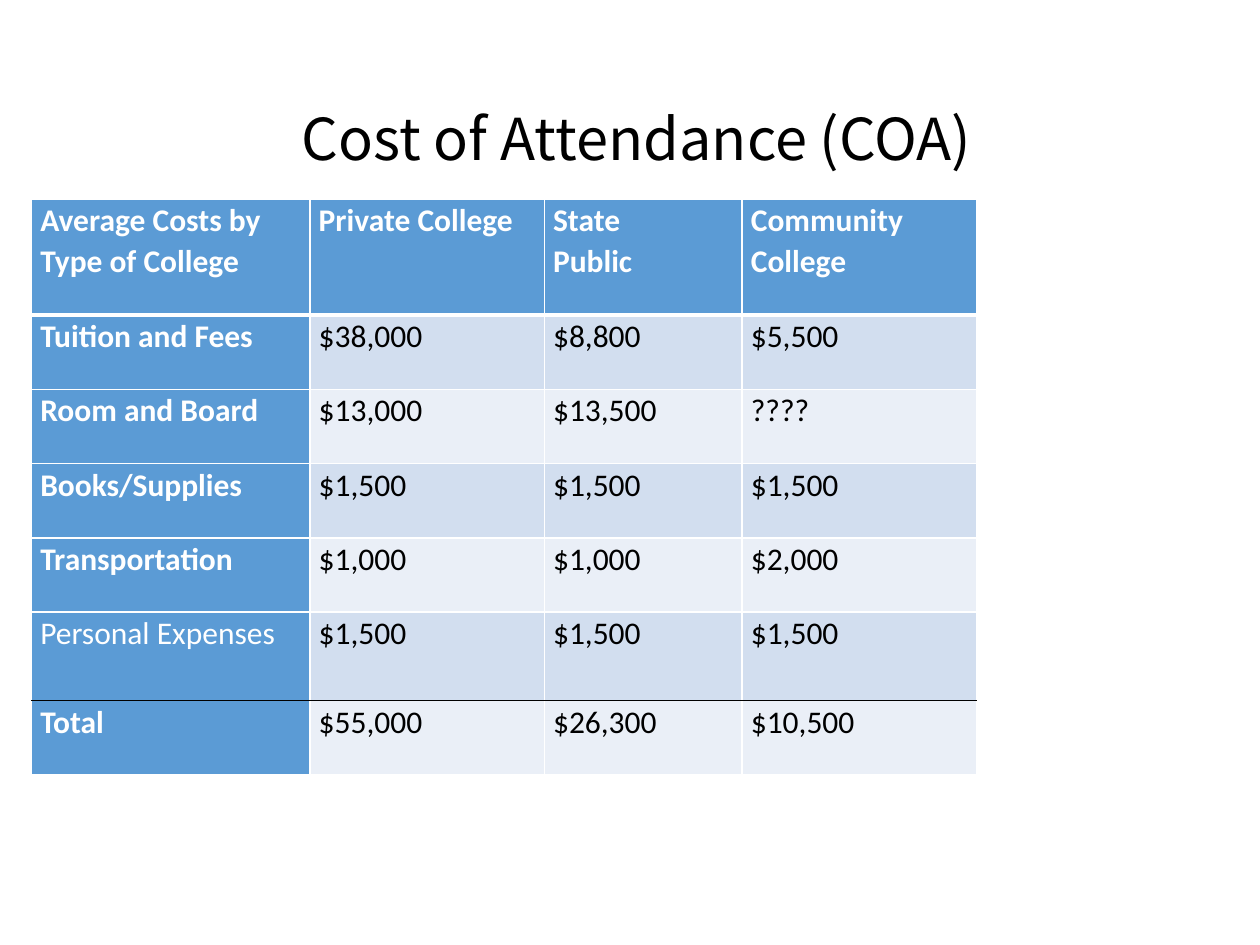
from dataclasses import dataclass

from lxml.etree import SubElement
from pptx import Presentation
from pptx.dml.color import RGBColor
from pptx.enum.text import MSO_ANCHOR, PP_ALIGN
from pptx.oxml.ns import qn
from pptx.util import Inches, Pt


@dataclass(frozen=True)
class Theme:
    white: str = "FFFFFF"
    black: str = "000000"
    header: str = "5B9BD5"
    bands: tuple = ("D2DEEF", "EAEFF7")
    body_font: str = "Calibri"
    title_font: str = "Noto Sans CJK SC"
    title_size: int = 33
    body_size: int = 18
    rule: int = 1
    header_rule: int = 3


THEME = Theme()

TITLE = "Cost of Attendance (COA)"
COSTS = [
    ("Average Costs by Type of College", "Private College", "State\nPublic", "Community College"),
    ("Tuition and Fees", "$38,000", "$8,800", "$5,500"),
    ("Room and Board", "$13,000", "$13,500", "????"),
    ("Books/Supplies", "$1,500", "$1,500", "$1,500"),
    ("Transportation", "$1,000", "$1,000", "$2,000"),
    ("Personal Expenses", "$1,500", "$1,500", "$1,500"),
    ("Total", "$55,000", "$26,300", "$10,500"),
]
TOTAL_ROW = len(COSTS) - 1
LIGHT_LABEL = "Personal Expenses"

COLUMN_WIDTHS = [2.21, 1.86, 1.57, 1.86]
ROW_HEIGHTS = [0.92, 0.59, 0.59, 0.59, 0.59, 0.7, 0.59]


def style_run(run, font, size, color, bold=False):
    run.font.name = font
    run.font.size = Pt(size)
    run.font.bold = bold
    run.font.color.rgb = RGBColor.from_string(color)


def add_title(slide):
    box = slide.shapes.add_textbox(Inches(0.69), Inches(0.4), Inches(8.62), Inches(1.45))
    frame = box.text_frame
    frame.word_wrap = True
    frame.vertical_anchor = MSO_ANCHOR.MIDDLE
    heading = frame.paragraphs[0]
    heading.alignment = PP_ALIGN.CENTER
    heading.line_spacing = 0.9
    for text, font in ((" ", THEME.body_font), (TITLE, THEME.title_font)):
        run = heading.add_run()
        run.text = text
        style_run(run, font, THEME.title_size, THEME.black)


def set_borders(cell, row):
    """Draw white cell edges, heavier under the header and black above the total."""
    top = bottom = (THEME.white, THEME.rule)
    if row == 0:
        bottom = (THEME.white, THEME.header_rule)
    elif row == 1:
        top = (THEME.white, THEME.header_rule)
    elif row == TOTAL_ROW - 1:
        bottom = (THEME.black, THEME.rule)
    elif row == TOTAL_ROW:
        top = (THEME.black, THEME.rule)
    side = (THEME.white, THEME.rule)
    properties = cell._tc.get_or_add_tcPr()
    for edge, (color, width) in zip(("lnL", "lnR", "lnT", "lnB"), (side, side, top, bottom)):
        line = SubElement(properties, qn(f"a:{edge}"), w=str(Pt(width)))
        SubElement(SubElement(line, qn("a:solidFill")), qn("a:srgbClr"), val=color)


def fill_cell(cell, text, row, column):
    is_heading = row == 0 or column == 0
    set_borders(cell, row)
    cell.fill.solid()
    fill = THEME.header if is_heading else THEME.bands[(row - 1) % 2]
    cell.fill.fore_color.rgb = RGBColor.from_string(fill)
    cell.margin_left = cell.margin_right = Inches(0.07)
    cell.margin_top = cell.margin_bottom = 0
    cell.text_frame.text = text
    for paragraph in cell.text_frame.paragraphs:
        paragraph.line_spacing = 1.07
        for run in paragraph.runs:
            style_run(run, THEME.body_font, THEME.body_size,
                      THEME.white if is_heading else THEME.black,
                      is_heading and text != LIGHT_LABEL)


def add_cost_table(slide):
    table = slide.shapes.add_table(
        len(COSTS), len(COLUMN_WIDTHS), Inches(0.25), Inches(1.58),
        Inches(sum(COLUMN_WIDTHS)), Inches(sum(ROW_HEIGHTS))).table
    table.first_col = True
    for column, width in zip(table.columns, COLUMN_WIDTHS):
        column.width = Inches(width)
    for table_row, height in zip(table.rows, ROW_HEIGHTS):
        table_row.height = Inches(height)
    for row, entries in enumerate(COSTS):
        for column, text in enumerate(entries):
            fill_cell(table.cell(row, column), text, row, column)


def main():
    deck = Presentation()
    deck.slide_width, deck.slide_height = Inches(10), Inches(7.5)
    slide = deck.slides.add_slide(deck.slide_layouts[6])
    add_title(slide)
    add_cost_table(slide)
    deck.save("out.pptx")


if __name__ == "__main__":
    main()
